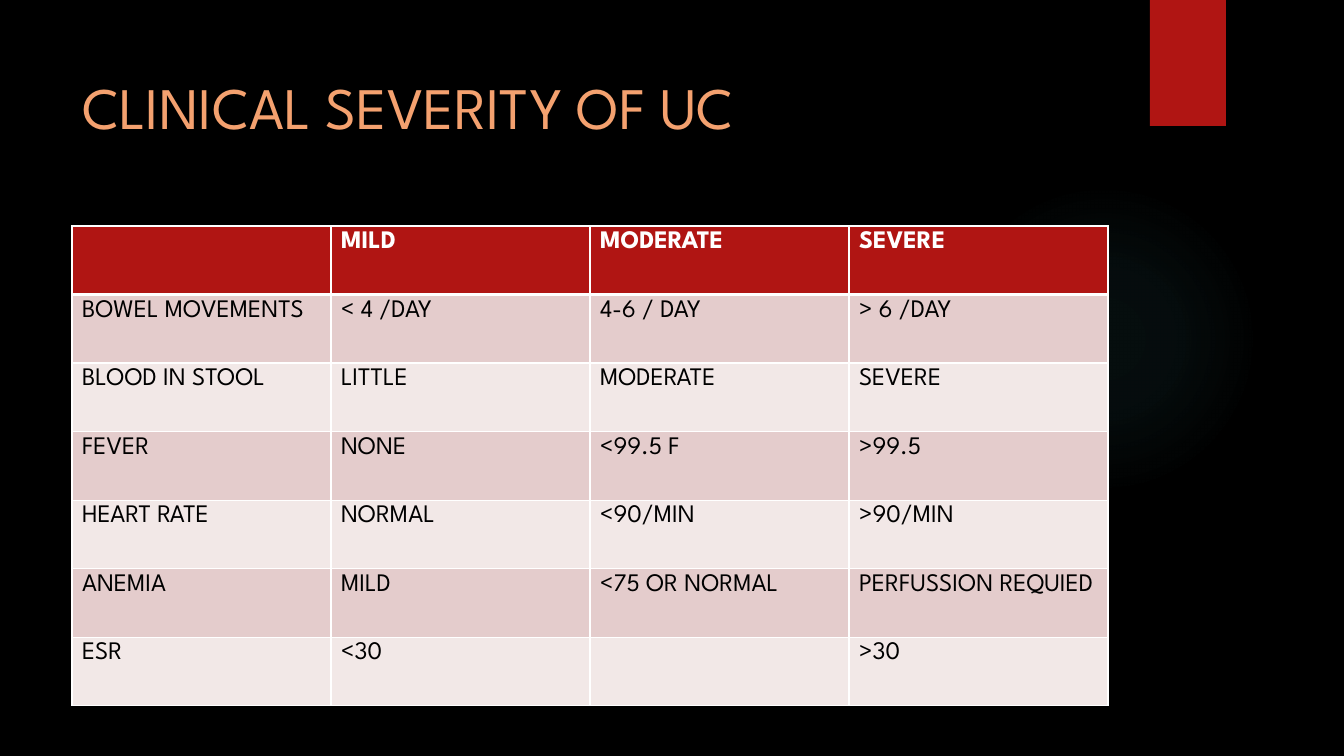
"""Build the slide on the clinical severity of UC."""
from dataclasses import dataclass

from lxml import etree
from pptx import Presentation
from pptx import util as u
from pptx.dml.color import RGBColor
from pptx.enum import shapes, text
from pptx.oxml import ns

TITLE = "CLINICAL SEVERITY OF UC"
ROWS = [
    ("", "MILD", "MODERATE", "SEVERE"),
    ("BOWEL MOVEMENTS", "< 4 /DAY", "4-6 / DAY", "> 6 /DAY"),
    ("BLOOD IN STOOL", "LITTLE", "MODERATE", "SEVERE"),
    ("FEVER", "NONE", "<99.5 F", ">99.5"),
    ("HEART RATE", "NORMAL", "<90/MIN", ">90/MIN"),
    ("ANEMIA", "MILD", "<75 OR NORMAL", "PERFUSSION REQUIED"),
    ("ESR", "<30", "", ">30"),
]
SLIDE_SIZE = (1344, 756)
TITLE_BOX = (72, 50, 1037, 154)
TABLE_BOX = (72, 226, 1036, 480)
GLOW_BOX = (949, 184, 310, 310)
RIBBON_BOX = (1150, 0, 76, 126)
GLOW_STOPS = [(0, 7), (36, 6), (69, 0)]


@dataclass(frozen=True)
class Theme:
    font: str = "League Spartan"
    title_size: int = 42
    cell_size: int = 18
    background: str = "000000"
    title: str = "F4A16F"
    accent: str = "B01513"
    glow: str = "50B9C1"
    light: str = "FFFFFF"
    dark: str = "000000"
    bands: tuple = ("F2E8E7", "E4CCCC")
    thin: int = 1
    thick: int = 3


THEME = Theme()


def px(length):
    return u.Emu(round(length * 914400 / 100.8))


def place(box):
    return [px(length) for length in box]


def paint(fill, color):
    fill.solid()
    fill.fore_color.rgb = RGBColor.from_string(color)


def write(frame, content, size, color, bold=False):
    paragraph = frame.paragraphs[0]
    paragraph.alignment = text.PP_ALIGN.LEFT
    run = paragraph.add_run()
    run.text = content
    run.font.name = THEME.font
    run.font.size = u.Pt(size)
    run.font.bold = bold
    run.font.color.rgb = RGBColor.from_string(color)


def add_plain_shape(slide, kind, box, color):
    shape = slide.shapes.add_shape(kind, *place(box))
    shape.shadow.inherit = False
    paint(shape.fill, color)
    shape.line.fill.background()
    return shape


def add_glow(slide):
    shape = add_plain_shape(slide, shapes.MSO_SHAPE.OVAL, GLOW_BOX, THEME.glow)
    solid = shape.element.spPr.find(ns.qn("a:solidFill"))
    gradient = etree.Element(ns.qn("a:gradFill"), rotWithShape="1")
    stops = etree.SubElement(gradient, ns.qn("a:gsLst"))
    for position, opacity in GLOW_STOPS:
        stop = etree.SubElement(stops, ns.qn("a:gs"), pos=str(position * 1000))
        color = etree.SubElement(stop, ns.qn("a:srgbClr"), val=THEME.glow)
        etree.SubElement(color, ns.qn("a:alpha"), val=str(opacity * 1000))
    circle = etree.SubElement(gradient, ns.qn("a:path"), path="circle")
    etree.SubElement(circle, ns.qn("a:fillToRect"), dict.fromkeys("ltrb", "50000"))
    solid.getparent().replace(solid, gradient)


def add_borders(cell, top, bottom):
    properties = cell._tc.get_or_add_tcPr()
    widths = {"lnL": THEME.thin, "lnR": THEME.thin, "lnT": top, "lnB": bottom}
    for index, (side, width) in enumerate(widths.items()):
        line = etree.Element(ns.qn(f"a:{side}"), w=str(u.Pt(width)))
        fill = etree.SubElement(line, ns.qn("a:solidFill"))
        etree.SubElement(fill, ns.qn("a:srgbClr"), val=THEME.light)
        properties.insert(index, line)


def add_severity_table(slide):
    table = slide.shapes.add_table(len(ROWS), len(ROWS[0]), *place(TABLE_BOX)).table
    table.horz_banding = False
    for row_index, row in enumerate(ROWS):
        header = row_index == 0
        for column_index, content in enumerate(row):
            cell = table.cell(row_index, column_index)
            paint(cell.fill, THEME.accent if header else THEME.bands[row_index % 2])
            add_borders(cell, THEME.thick if row_index == 1 else THEME.thin,
                        THEME.thick if header else THEME.thin)
            if content:
                write(cell.text_frame, content, THEME.cell_size,
                      THEME.light if header else THEME.dark, bold=header)


def add_title(slide):
    title = slide.shapes.title
    title.left, title.top, title.width, title.height = place(TITLE_BOX)
    frame = title.text_frame
    frame.vertical_anchor = text.MSO_ANCHOR.TOP
    frame.auto_size = text.MSO_AUTO_SIZE.NONE
    frame.margin_top = px(21)
    write(frame, TITLE, THEME.title_size, THEME.title)


def main():
    presentation = Presentation()
    presentation.slide_width, presentation.slide_height = place(SLIDE_SIZE)
    slide = presentation.slides.add_slide(presentation.slide_layouts[5])
    paint(slide.background.fill, THEME.background)
    add_glow(slide)
    add_plain_shape(slide, shapes.MSO_SHAPE.RECTANGLE, RIBBON_BOX, THEME.accent)
    add_title(slide)
    add_severity_table(slide)
    presentation.save("out.pptx")


if __name__ == "__main__":
    main()
